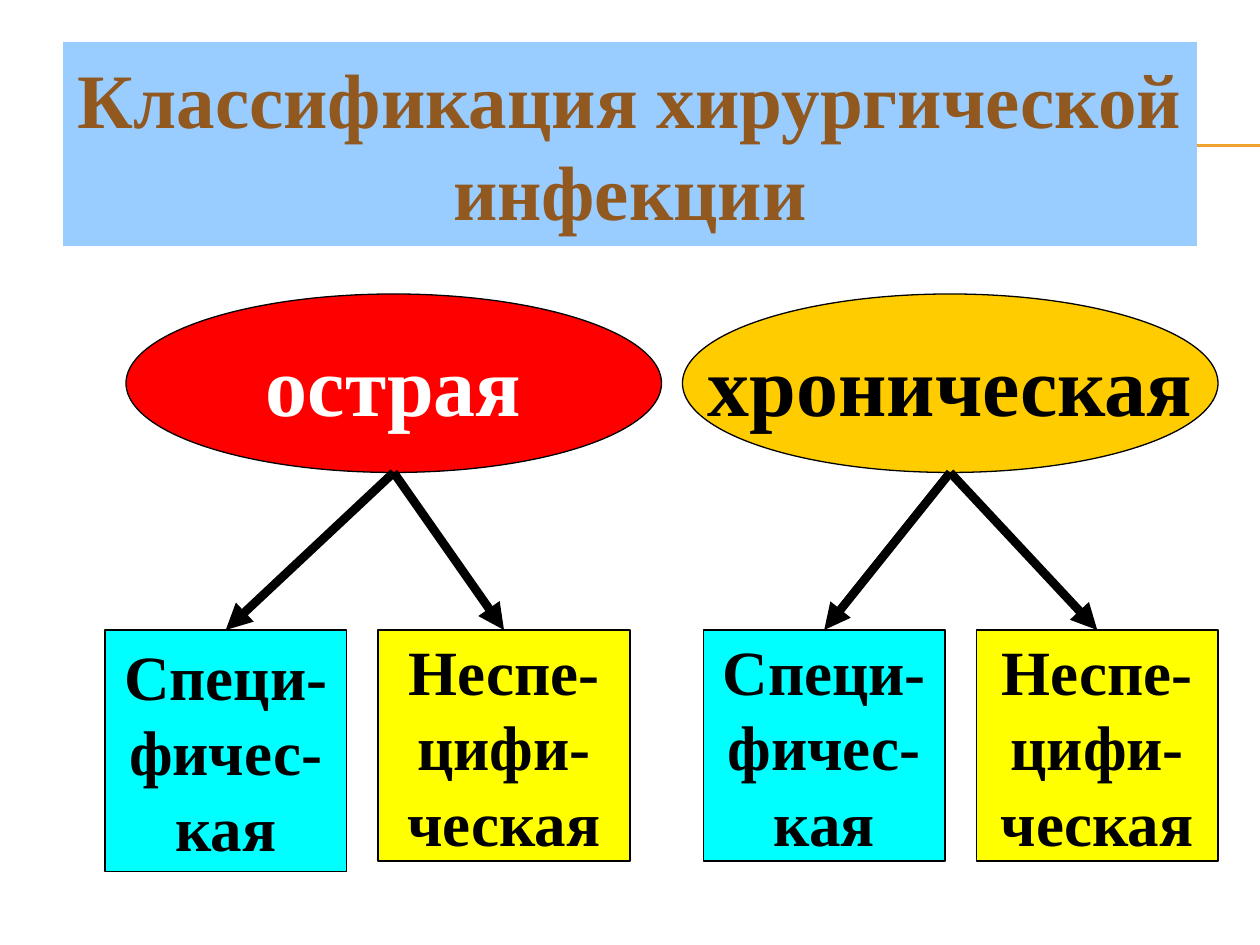
import pptx
import pptx.dml.color
import pptx.enum.shapes
import pptx.enum.text
import pptx.oxml.ns
import pptx.util
from lxml import etree

Pt = pptx.util.Pt
RGBColor = pptx.dml.color.RGBColor
SHAPE = pptx.enum.shapes.MSO_SHAPE
ANCHOR = pptx.enum.text.MSO_ANCHOR
ALIGN = pptx.enum.text.PP_ALIGN
qn = pptx.oxml.ns.qn

BLACK = RGBColor(0x00, 0x00, 0x00)
WHITE = RGBColor(0xFF, 0xFF, 0xFF)
RED = RGBColor(0xFF, 0x00, 0x00)
GOLD = RGBColor(0xFF, 0xCC, 0x00)
CYAN = RGBColor(0x00, 0xFF, 0xFF)
YELLOW = RGBColor(0xFF, 0xFF, 0x00)
SKY = RGBColor(0x99, 0xCC, 0xFF)
BROWN = RGBColor(0x91, 0x58, 0x1F)
ORANGE = RGBColor(0xF0, 0xA2, 0x2E)

SPECIFIC = ("Специ-", "фичес-", "кая")
NONSPECIFIC = ("Неспе-", "цифи-", "ческая")
ELLIPSE_TOP, ELLIPSE_W, ELLIPSE_H = 168, 306, 102
BOX_TOP = 360

# form name, left, fill, text colour, boxes: (lines, left, width, height, fill)
FORMS = (
    ("острая", 72, RED, WHITE,
     ((SPECIFIC, 60, 138, 138, CYAN), (NONSPECIFIC, 216, 144, 132, YELLOW))),
    ("хроническая", 390, GOLD, BLACK,
     ((SPECIFIC, 402, 138, 132, CYAN), (NONSPECIFIC, 558, 138, 132, YELLOW))),
)


class SlideBuilder:
    """Holds the type style and the slide being filled."""

    font = {"name": "Times New Roman", "bold": True}
    line_width = 0.75

    def __init__(self, slide):
        self.s = slide

    def text(self, sp, lines, size, color, wrap):
        tf = sp.text_frame
        frame = {"word_wrap": wrap, "vertical_anchor": ANCHOR.MIDDLE,
                 "auto_size": pptx.enum.text.MSO_AUTO_SIZE.NONE}
        for name, value in frame.items():
            setattr(tf, name, value)
        for i, line in enumerate(lines):
            p = tf.add_paragraph() if i else tf.paragraphs[0]
            p.alignment = ALIGN.CENTER
            r = p.add_run()
            r.text = line
            for name, value in {**self.font, "size": Pt(size)}.items():
                setattr(r.font, name, value)
            r.font.color.rgb = color

    def title(self, text, left, top, width, height):
        sp = self.s.shapes.title
        place = {"left": left, "top": top, "width": width, "height": height}
        for name, value in place.items():
            setattr(sp, name, Pt(value))
        sp.fill.solid()
        sp.fill.fore_color.rgb = SKY
        self.text(sp, [text], 44, BROWN, True)
        # bring the title in front of the rules
        sp._element.getparent().append(sp._element)

    def shape(self, kind, left, top, width, height, fill, lines, size, color):
        sp = self.s.shapes.add_shape(
            kind, Pt(left), Pt(top), Pt(width), Pt(height))
        sp.shadow.inherit = False
        sp.fill.solid()
        sp.fill.fore_color.rgb = fill
        sp.line.color.rgb = BLACK
        sp.line.width = Pt(self.line_width)
        self.text(sp, lines, size, color, False)

    def line(self, x1, y1, x2, y2, color, width, arrow=False):
        c = self.s.shapes.add_connector(
            pptx.enum.shapes.MSO_CONNECTOR.STRAIGHT,
            Pt(x1), Pt(y1), Pt(x2), Pt(y2))
        c.line.color.rgb = color
        c.line.width = Pt(width)
        if arrow:
            ln = c._element.spPr.find(qn("a:ln"))
            etree.SubElement(ln, qn("a:tailEnd"), type="triangle")
        etree.SubElement(c._element.spPr, qn("a:effectLst"))


def main():
    prs = pptx.Presentation()
    prs.slide_width, prs.slide_height = Pt(720), Pt(540)
    b = SlideBuilder(prs.slides.add_slide(prs.slide_layouts[5]))

    for y in (82.8, 83.5):
        b.line(40, y, 720, y, ORANGE, b.line_width)
    b.title("Классификация хирургической инфекции", 36, 24, 648, 116.5)

    for name, left, fill, color, boxes in FORMS:
        b.shape(SHAPE.OVAL, left, ELLIPSE_TOP, ELLIPSE_W, ELLIPSE_H,
                fill, [name], 48, color)
        for lines, x, width, height, box_fill in boxes:
            b.shape(SHAPE.RECTANGLE, x, BOX_TOP, width, height,
                    box_fill, lines, 36, BLACK)
            b.line(left + ELLIPSE_W / 2, ELLIPSE_TOP + ELLIPSE_H,
                   x + width / 2, BOX_TOP, BLACK, 5, arrow=True)

    prs.save("out.pptx")


if __name__ == "__main__":
    main()
